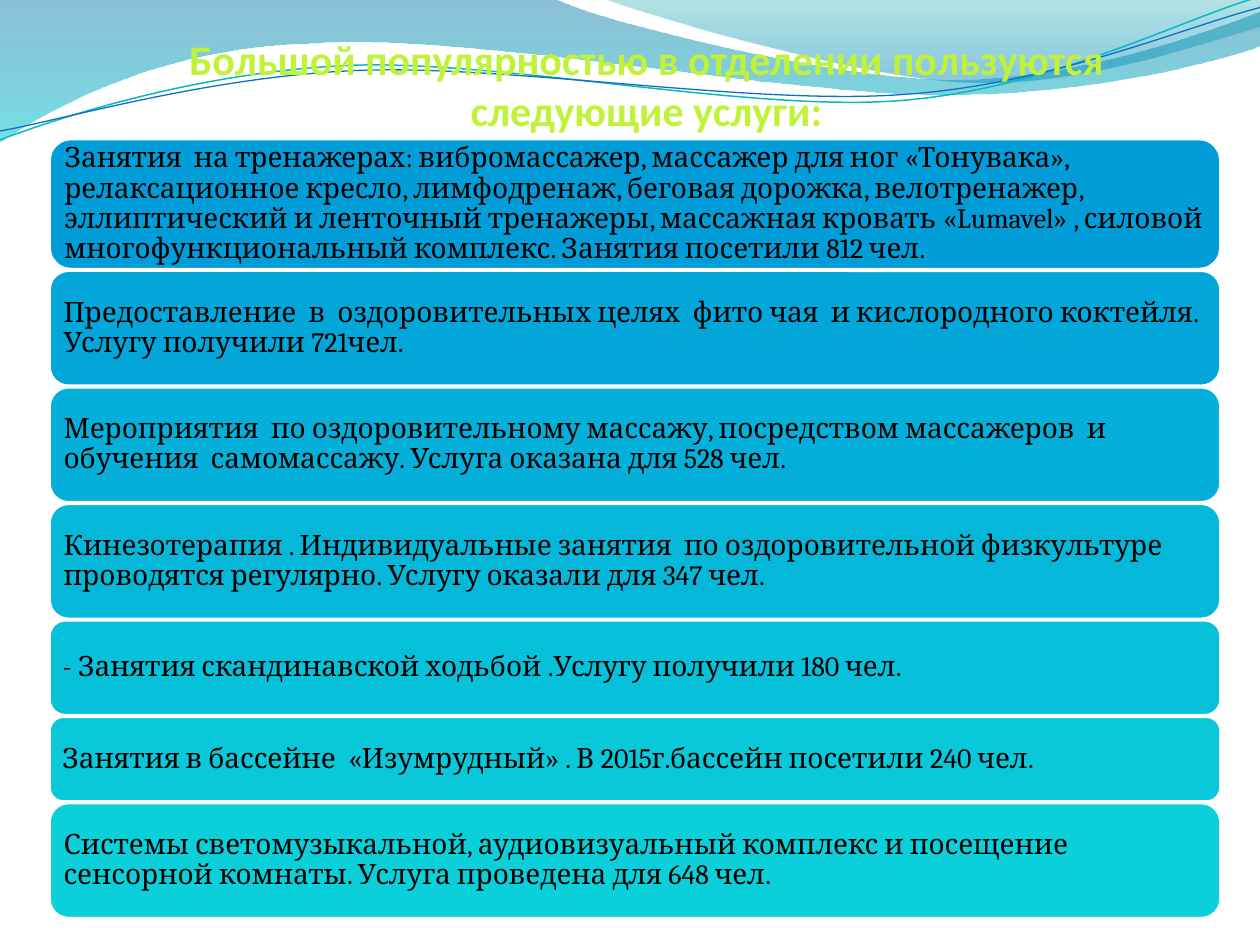
from lxml import etree
from pptx import Presentation
from pptx.dml.color import RGBColor
from pptx.enum.shapes import MSO_SHAPE as Shape
from pptx.enum.text import MSO_ANCHOR as Anchor, PP_ALIGN as Align
from pptx.oxml.ns import qn
from pptx.util import Inches, Pt

rgb = RGBColor.from_string


def draw_path(shapes, start, segments, close):
    """Draw a freeform; a segment is a line end (x, y) or a cubic curve (x1, y1, x2, y2, x, y)."""
    points = [(Inches(x), Inches(y)) for segment in segments
              for x, y in zip(segment[::2], segment[1::2])]
    builder = shapes.build_freeform(Inches(start[0]), Inches(start[1]))
    builder.add_line_segments(points, close=close)
    shape = builder.convert_to_shape()
    shape.shadow.inherit = False
    # Join the three line ends of each curve into one cubic segment
    line_nodes = iter(shape.element.findall(".//" + qn("a:lnTo")))
    for segment in segments:
        nodes = [next(line_nodes) for _ in segment[::2]]
        if len(nodes) == 3:
            curve = etree.Element(qn("a:cubicBezTo"))
            nodes[0].addprevious(curve)
            for node in nodes:
                curve.append(node[0])
                node.getparent().remove(node)
    return shape


def fill_gradient(fill, element, stops):
    """Fill from top to bottom with stops of (position %, colour, opacity %)."""
    fill.gradient()
    fill.gradient_angle = 270
    stop_list = element.find(".//" + qn("a:gsLst"))
    for old_stop in list(stop_list):
        stop_list.remove(old_stop)
    for position, color, opacity in stops:
        stop = etree.SubElement(stop_list, qn("a:gs"), pos=str(position * 1000))
        color_node = etree.SubElement(stop, qn("a:srgbClr"), val=color)
        if opacity < 100:
            etree.SubElement(color_node, qn("a:alpha"), val=str(opacity * 1000))


presentation = Presentation()
presentation.slide_width = Inches(10)
presentation.slide_height = Inches(7.5)
slide = presentation.slides.add_slide(presentation.slide_layouts[6])
shapes = slide.shapes

# Waves along the top edge
waves = [
    ((0, 0),
     [(4.4, -0.01), (4.76, 0.17, 6.64, 0.63, 7.58, 0.63),
      (8.53, 0.63, 9.58, 0.26, 10, 0.09), (10.01, 0.36),
      (9.83, 0.44, 8.7, 0.76, 7.46, 0.75), (6.22, 0.75, 3.82, 0.28, 2.57, 0.34),
      (1.29, 0.36, 0.46, 0.83, -0.01, 1.13)],
     [(0, "0074A1", 45), (100, "00C6CF", 55)]),
    ((4.79, -0.01),
     [(5.09, 0.11, 6.82, 0.62, 7.69, 0.65), (8.56, 0.69, 9.61, 0.32, 10, 0.21), (10, 0)],
     [(0, "00A1A9", 30), (80, "008BBF", 45)]),
]
for start, segments, stops in waves:
    wave = draw_path(shapes, start, segments, close=True)
    fill_gradient(wave.fill, wave.element, stops)
    wave.line.fill.background()

wave_lines = [
    ((0, 1.11),
     [(0.48, 0.93, 1.58, 0.57, 2.77, 0.52), (3.95, 0.47, 5.93, 0.89, 7.13, 0.8),
      (8.33, 0.71, 9.38, 0.15, 9.98, -0.02)], "0AB8BF", 0.85),
    ((0, 1.04),
     [(0.47, 0.96, 1.64, 0.61, 2.83, 0.56), (4.03, 0.51, 5.97, 0.84, 7.17, 0.75),
      (8.36, 0.67, 9.41, 0.21, 10, 0.06)], "0F6FC6", 0.75),
]
for start, segments, color, width in wave_lines:
    wave_line = draw_path(shapes, start, segments, close=False)
    wave_line.fill.background()
    wave_line.line.color.rgb = rgb(color)
    wave_line.line.width = Pt(width)

# Title
title = shapes.add_textbox(Inches(0.67), Inches(0.44), Inches(8.92), Inches(0.63))
title_format = {"word_wrap": True, "vertical_anchor": Anchor.BOTTOM, "margin_left": 0,
                "margin_top": Inches(0.05), "margin_right": 0, "margin_bottom": 0}
for name, value in title_format.items():
    setattr(title.text_frame, name, value)
paragraph = title.text_frame.paragraphs[0]
paragraph.alignment = Align.CENTER
run = paragraph.add_run()
run.text = "Большой популярностью в отделении пользуются следующие услуги:"
for name, value in {"name": "Calibri", "size": Pt(24), "bold": True}.items():
    setattr(run.font, name, value)
fill_gradient(run.font.fill, title.element,
              [(0, "627E06", 100), (78, "BFF238", 100), (100, "F8FEED", 100)])

# Stacked service bars: height, colour, text
services = [
    (1.04, "009DD9", "Занятия  на тренажерах: вибромассажер, массажер для ног «Тонувака», "
     "релаксационное кресло, лимфодренаж, беговая дорожка, велотренажер, эллиптический "
     "и ленточный тренажеры, массажная кровать «Lumavel» , силовой многофункциональный "
     "комплекс. Занятия посетили 812 чел."),
    (0.92, "02A6D9", "Предоставление  в  оздоровительных целях  фито чая  и кислородного "
     "коктейля. Услугу получили 721чел."),
    (0.92, "04AFD9", "Мероприятия  по оздоровительному массажу, посредством массажеров  "
     "и обучения  самомассажу. Услуга оказана для 528 чел."),
    (0.92, "05B7D9", "Кинезотерапия . Индивидуальные занятия  по оздоровительной "
     "физкультуре проводятся регулярно. Услугу оказали для 347 чел."),
    (0.76, "07C0D9", "- Занятия скандинавской ходьбой .Услугу получили 180 чел."),
    (0.68, "09C8D9", "Занятия в бассейне  «Изумрудный» . В 2015г.бассейн посетили 240 чел."),
    (0.92, "0BD0D9", "Системы светомузыкальной, аудиовизуальный комплекс и посещение "
     "сенсорной комнаты. Услуга проведена для 648 чел."),
]
bar_format = {"word_wrap": True, "vertical_anchor": Anchor.MIDDLE,
              "margin_left": Inches(0.07), "margin_top": Inches(0.07),
              "margin_right": Inches(0.07), "margin_bottom": Inches(0.07)}
top, bottom = 1.1, 7.29
gap = (bottom - top - sum(service[0] for service in services)) / (len(services) - 1)
for height, color, text in services:
    bar = shapes.add_shape(Shape.ROUNDED_RECTANGLE, Inches(0.39), Inches(top),
                           Inches(9.3), Inches(height))
    bar.shadow.inherit = False
    bar.fill.solid()
    bar.fill.fore_color.rgb = rgb(color)
    bar.line.color.rgb = rgb("FFFFFF")
    bar.line.width = Pt(2)
    for name, value in bar_format.items():
        setattr(bar.text_frame, name, value)
    paragraph = bar.text_frame.paragraphs[0]
    paragraph.alignment = Align.LEFT
    paragraph.line_spacing = 0.9
    run = paragraph.add_run()
    run.text = text
    for name, value in {"name": "Cambria", "size": Pt(16)}.items():
        setattr(run.font, name, value)
    run.font.color.rgb = rgb("000000")
    top += height + gap

presentation.save("out.pptx")
